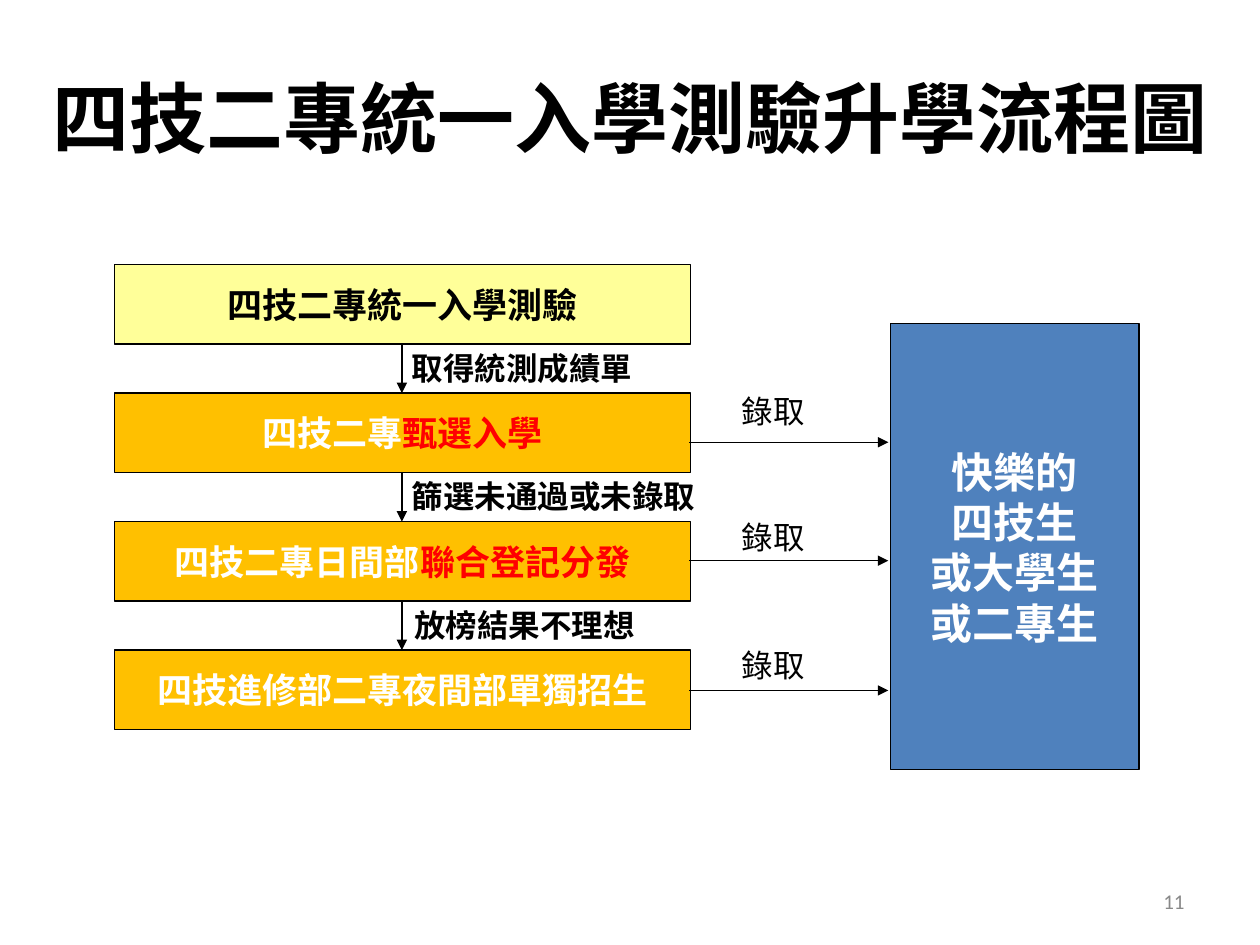
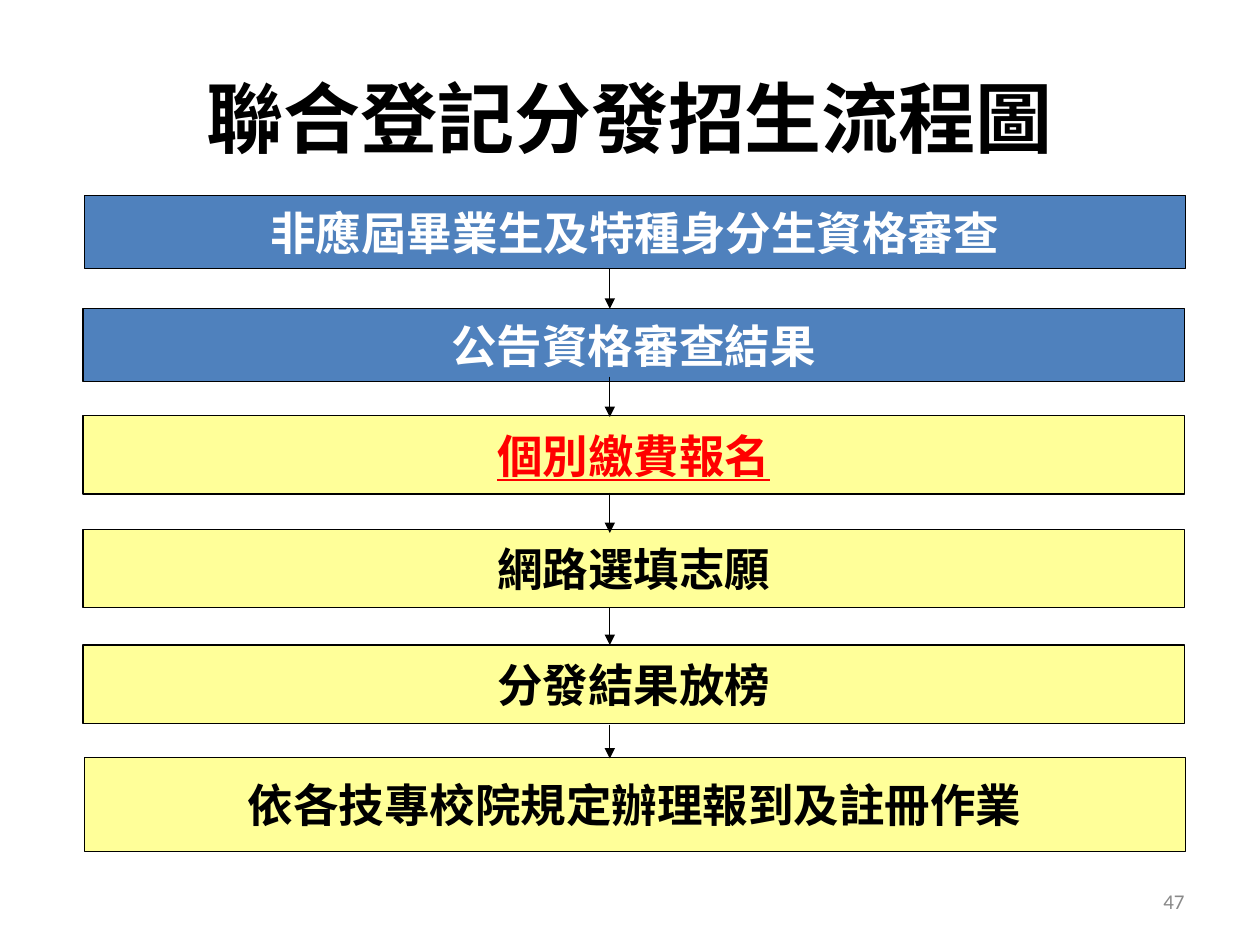
from dataclasses import dataclass

from lxml import etree
from pptx import Presentation
from pptx.dml.color import RGBColor
from pptx.enum.shapes import MSO_CONNECTOR, MSO_SHAPE
from pptx.enum.text import MSO_ANCHOR, PP_ALIGN
from pptx.oxml.ns import qn
from pptx.util import Emu, Pt

RECT, STRAIGHT = MSO_SHAPE.RECTANGLE, MSO_CONNECTOR.STRAIGHT
LEFT, CENTER, RIGHT = PP_ALIGN.LEFT, PP_ALIGN.CENTER, PP_ALIGN.RIGHT
TOP, MIDDLE = MSO_ANCHOR.TOP, MSO_ANCHOR.MIDDLE

PX = 9144
CJK, MONO, LATIN = "Noto Sans CJK SC", "Noto Sans Mono", "Calibri"
BLACK, WHITE, RED, GRAY = "000000", "FFFFFF", "FF0000", "898989"
BLUE, YELLOW, ORANGE = "4F81BD", "FFFF99", "FFC000"


@dataclass(frozen=True)
class Style:
    size: int
    color: str = BLACK
    font: str = CJK
    bold: bool = True
    underline: bool = False
    align: PP_ALIGN = CENTER
    anchor: MSO_ANCHOR = MIDDLE
    wrap: bool = False


@dataclass(frozen=True)
class Box:
    x: int
    y: int
    w: int
    h: int


@dataclass(frozen=True)
class Stage:
    text: str
    fill: str
    color: str
    highlight: str = ""


@dataclass(frozen=True)
class Label:
    text: str
    box: Box
    wrap: bool = True


@dataclass(frozen=True)
class Admission:
    label_y: int
    arrow_y: int


@dataclass(frozen=True)
class Step:
    text: str
    box: Box
    fill: str
    color: str
    underline: bool = False


@dataclass(frozen=True)
class Span:
    start: int
    end: int


STAGES = [
    Stage("四技二專統一入學測驗", YELLOW, BLACK),
    Stage("四技二專", ORANGE, WHITE, "甄選入學"),
    Stage("四技二專日間部", ORANGE, WHITE, "聯合登記分發"),
    Stage("四技進修部二專夜間部單獨招生", ORANGE, WHITE),
]
STAGE_X, STAGE_Y, STAGE_W, STAGE_H, STAGE_PITCH = 91, 210, 457, 63, 102
STAGE_LABELS = [
    Label("取得統測成績單", Box(317, 272, 195, 40), False),
    Label("篩選未通過或未錄取", Box(317, 374, 254, 40)),
    Label("放榜結果不理想", Box(319, 476, 220, 40)),
]
ADMISSIONS = [Admission(306, 351), Admission(406, 445), Admission(508, 548)]

STEPS = [
    Step("非應屆畢業生及特種身分生資格審查", Box(67, 155, 874, 58), BLUE, WHITE),
    Step("公告資格審查結果", Box(66, 245, 874, 58), BLUE, WHITE),
    Step("個別繳費報名", Box(66, 330, 874, 62), YELLOW, RED, True),
    Step("網路選填志願", Box(66, 420, 874, 62), YELLOW, BLACK),
    Step("分發結果放榜", Box(66, 512, 874, 62), YELLOW, BLACK),
    Step("依各技專校院規定辦理報到及註冊作業", Box(67, 601, 874, 75), YELLOW, BLACK),
]
STEP_ARROW_X = 484
STEP_ARROWS = [Span(213, 245), Span(299, 331), Span(391, 423),
               Span(482, 512), Span(575, 602)]


def px(n: int) -> Emu:
    return Emu(n * PX)


def rgb(color: str) -> RGBColor:
    return RGBColor.from_string(color)


def format_run(r, style: Style, color: str) -> None:
    font = r.font
    font.size, font.bold, font.name = Pt(style.size), style.bold, style.font
    font.color.rgb = rgb(color)
    if style.underline:
        font.underline = True
    latin = r._r.get_or_add_rPr().find(qn("a:latin"))
    ea = etree.Element(qn("a:ea"), typeface=style.font)
    latin.addnext(ea)


def write(tf, lines: list[str], style: Style, highlight: str = "") -> None:
    tf.word_wrap = style.wrap
    tf.vertical_anchor = style.anchor
    tf.text = "\n".join(lines)
    for p in tf.paragraphs:
        p.alignment = style.align
        format_run(p.runs[0], style, style.color)
    if highlight:
        r = p.add_run()
        r.text = highlight
        format_run(r, style, RED)


def add_text(s, box: Box, text: str, style: Style) -> None:
    tb = s.shapes.add_textbox(px(box.x), px(box.y), px(box.w), px(box.h))
    write(tb.text_frame, [text], style)


def add_block(s, box: Box, fill: str, lines: list[str], style: Style,
              highlight: str = "") -> None:
    sp = s.shapes.add_shape(RECT, px(box.x), px(box.y), px(box.w), px(box.h))
    sp.shadow.inherit = False
    sp.fill.solid()
    sp.fill.fore_color.rgb = rgb(fill)
    sp.line.color.rgb = rgb(BLACK)
    sp.line.width = Pt(0.75)
    write(sp.text_frame, lines, style, highlight)


def add_arrow(s, x1: int, y1: int, x2: int, y2: int) -> None:
    cn = s.shapes.add_connector(STRAIGHT, px(x1), px(y1), px(x2), px(y2))
    cn.line.color.rgb = rgb(BLACK)
    cn.line.width = Pt(0.75)
    sp_pr = cn._element.spPr
    etree.SubElement(sp_pr.find(qn("a:ln")), qn("a:tailEnd"), type="triangle")
    etree.SubElement(sp_pr, qn("a:effectLst"))


def add_slide(prs, title: str, title_box: Box, number: str):
    s = prs.slides.add_slide(prs.slide_layouts[6])
    add_text(s, title_box, title, Style(44, wrap=True))
    add_text(s, Box(717, 695, 233, 40), number,
             Style(12, GRAY, LATIN, bold=False, align=RIGHT, wrap=True))
    return s


def build_pathway(prs) -> None:
    s = add_slide(prs, "四技二專統一入學測驗升學流程圖", Box(20, 30, 961, 125), "11")
    mid_x = STAGE_X + STAGE_W // 2
    for i, stage in enumerate(STAGES):
        y = STAGE_Y + i * STAGE_PITCH
        add_block(s, Box(STAGE_X, y, STAGE_W, STAGE_H), stage.fill, [stage.text],
                  Style(20, stage.color), stage.highlight)
        if i < len(STAGES) - 1:
            add_arrow(s, mid_x, y + STAGE_H, mid_x, y + STAGE_PITCH)
    for label in STAGE_LABELS:
        add_text(s, label.box, label.text,
                 Style(18, align=LEFT, anchor=TOP, wrap=label.wrap))
    add_block(s, Box(707, 257, 197, 354), BLUE,
              ["快樂的", "四技生", "或大學生", "或二專生"], Style(24, WHITE))
    admitted = Style(18, font=MONO, bold=False, align=LEFT, anchor=TOP)
    for admission in ADMISSIONS:
        add_arrow(s, 547, admission.arrow_y, 705, admission.arrow_y)
        add_text(s, Box(579, admission.label_y, 70, 40), "錄取", admitted)


def build_registration(prs) -> None:
    s = add_slide(prs, "聯合登記分發招生流程圖", Box(50, 30, 900, 125), "47")
    for step in STEPS:
        add_block(s, step.box, step.fill, [step.text],
                  Style(26, step.color, underline=step.underline))
    for span in STEP_ARROWS:
        add_arrow(s, STEP_ARROW_X, span.start, STEP_ARROW_X, span.end)


def main() -> None:
    prs = Presentation()
    prs.slide_width, prs.slide_height = px(1000), px(750)
    build_pathway(prs)
    build_registration(prs)
    prs.save("out.pptx")


if __name__ == "__main__":
    main()
